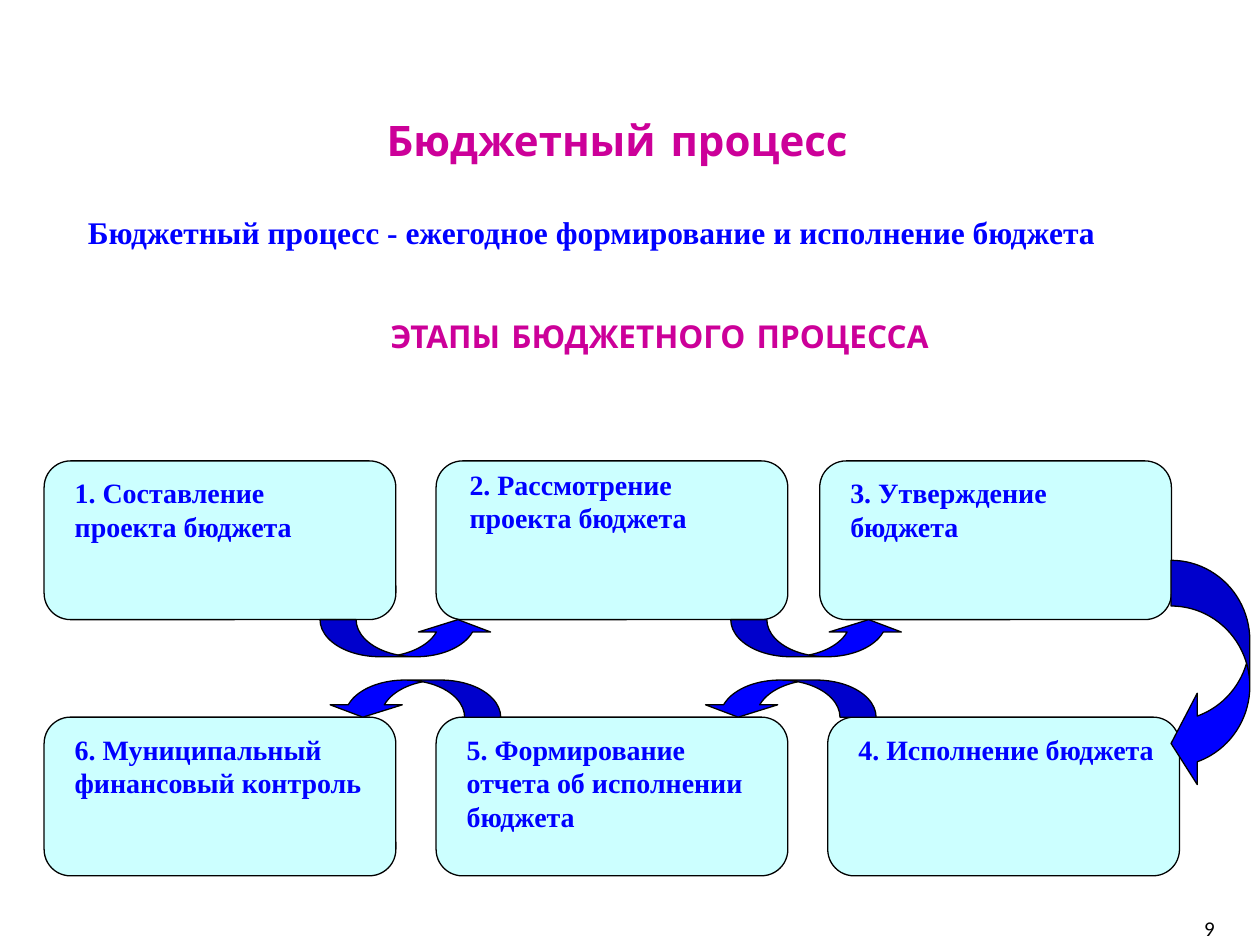
from dataclasses import dataclass

from pptx import Presentation
from pptx import util as u
from pptx.dml.color import RGBColor
from pptx.enum import shapes, text

Pt = u.Pt
Kind = shapes.MSO_SHAPE
Align = text.PP_ALIGN

MAGENTA = RGBColor(0xCC, 0x00, 0x99)
BLUE = RGBColor(0x00, 0x00, 0xFF)
PALE_CYAN = RGBColor(0xCC, 0xFF, 0xFF)
BLACK = RGBColor(0x00, 0x00, 0x00)

HEADING_FONT = "Comic Neue"
BODY_FONT = "Times New Roman"

CARD_W, CARD_H = 201, 90.7
LABEL_W, LABEL_H = 184, 57
TOP_ROW, BOTTOM_ROW = 263.4, 409.8
LEFT_COL, MIDDLE_COL = 25.2, 249.2
TURN_W, TURN_H = 99.4, 21.2
TURN_ADJUST = (0.973, 1.945, 0.333)
SIDE_ADJUST = (0.58, 1.16, 0.333)


@dataclass
class Caption:
    wording: str
    left: float
    top: float
    width: float
    height: float
    size: float
    font: str = BODY_FONT
    color: RGBColor = BLUE
    bold: bool = True
    align: Align = Align.LEFT
    anchor: text.MSO_ANCHOR = text.MSO_ANCHOR.TOP


@dataclass
class Stage:
    wording: str
    left: float
    top: float
    label_dx: float = 10.4
    label_dy: float = 5


@dataclass
class Arrow:
    kind: Kind
    left: float
    top: float
    width: float = TURN_W
    height: float = TURN_H
    adjust: tuple[float, ...] = TURN_ADJUST
    rotation: float = 0


CAPTIONS = [
    Caption("Бюджетный процесс", 213.8, 62, 368.6, 67.6, 24, HEADING_FONT, MAGENTA),
    Caption("Бюджетный процесс - ежегодное формирование и исполнение бюджета",
            43.2, 118.1, 688.3, 39.6, 18),
    Caption("ЭТАПЫ БЮДЖЕТНОГО ПРОЦЕССА", 146.2, 177.8, 461.5, 50.4, 18,
            HEADING_FONT, MAGENTA, align=Align.CENTER),
    Caption("9", 641.5, 520.6, 59.8, 19.4, 12, "Calibri", BLACK, False,
            Align.RIGHT, text.MSO_ANCHOR.MIDDLE),
]

STAGES = [
    Stage("1. Составление проекта бюджета", LEFT_COL, TOP_ROW),
    Stage("2. Рассмотрение проекта бюджета", MIDDLE_COL, TOP_ROW, 12, 0),
    Stage("3. Утверждение бюджета", 468.4, TOP_ROW),
    Stage("4. Исполнение бюджета", 473, BOTTOM_ROW),
    Stage("5. Формирование отчета об исполнении бюджета", MIDDLE_COL, BOTTOM_ROW),
    Stage("6. Муниципальный финансовый контроль", LEFT_COL, BOTTOM_ROW),
]

ARROWS = [
    Arrow(Kind.CURVED_UP_ARROW, 182.9, TOP_ROW + CARD_H),
    Arrow(Kind.CURVED_UP_ARROW, 417.6, TOP_ROW + CARD_H),
    Arrow(Kind.CURVED_LEFT_ARROW, 669.2, 320.2, 45, 130.8, SIDE_ADJUST),
    Arrow(Kind.CURVED_UP_ARROW, 401.2, BOTTOM_ROW - TURN_H, rotation=180),
    Arrow(Kind.CURVED_UP_ARROW, 186.7, BOTTOM_ROW - TURN_H, rotation=180),
]


def add_caption(slide, caption: Caption) -> None:
    box = slide.shapes.add_textbox(Pt(caption.left), Pt(caption.top),
                                   Pt(caption.width), Pt(caption.height))
    frame = box.text_frame
    frame.word_wrap = True
    frame.vertical_anchor = caption.anchor
    line = frame.paragraphs[0]
    line.alignment = caption.align
    run = line.add_run()
    run.text = caption.wording
    run.font.name = caption.font
    run.font.size = Pt(caption.size)
    run.font.bold = caption.bold
    run.font.color.rgb = caption.color


def add_outlined(slide, kind: Kind, left: float, top: float,
                 width: float, height: float, fill: RGBColor):
    figure = slide.shapes.add_shape(kind, Pt(left), Pt(top), Pt(width), Pt(height))
    figure.shadow.inherit = False
    figure.fill.solid()
    figure.fill.fore_color.rgb = fill
    figure.line.color.rgb = BLACK
    figure.line.width = Pt(0.75)
    return figure


def add_stage(slide, stage: Stage) -> None:
    add_outlined(slide, Kind.FLOWCHART_ALTERNATE_PROCESS, stage.left, stage.top,
                 CARD_W, CARD_H, PALE_CYAN)
    add_caption(slide, Caption(stage.wording, stage.left + stage.label_dx,
                               stage.top + stage.label_dy, LABEL_W, LABEL_H, 16))


def add_arrow(slide, arrow: Arrow) -> None:
    figure = add_outlined(slide, arrow.kind, arrow.left, arrow.top,
                          arrow.width, arrow.height, BLUE)
    figure.rotation = arrow.rotation
    for index, value in enumerate(arrow.adjust):
        figure.adjustments[index] = value


def main() -> None:
    deck = Presentation()
    deck.slide_width, deck.slide_height = Pt(720), Pt(540)
    slide = deck.slides.add_slide(deck.slide_layouts[6])

    # Headings and page number
    for caption in CAPTIONS:
        add_caption(slide, caption)

    # Six stages of the process
    for stage in STAGES:
        add_stage(slide, stage)

    # Curved arrows from stage to stage
    for arrow in ARROWS:
        add_arrow(slide, arrow)

    deck.save("out.pptx")


if __name__ == "__main__":
    main()
